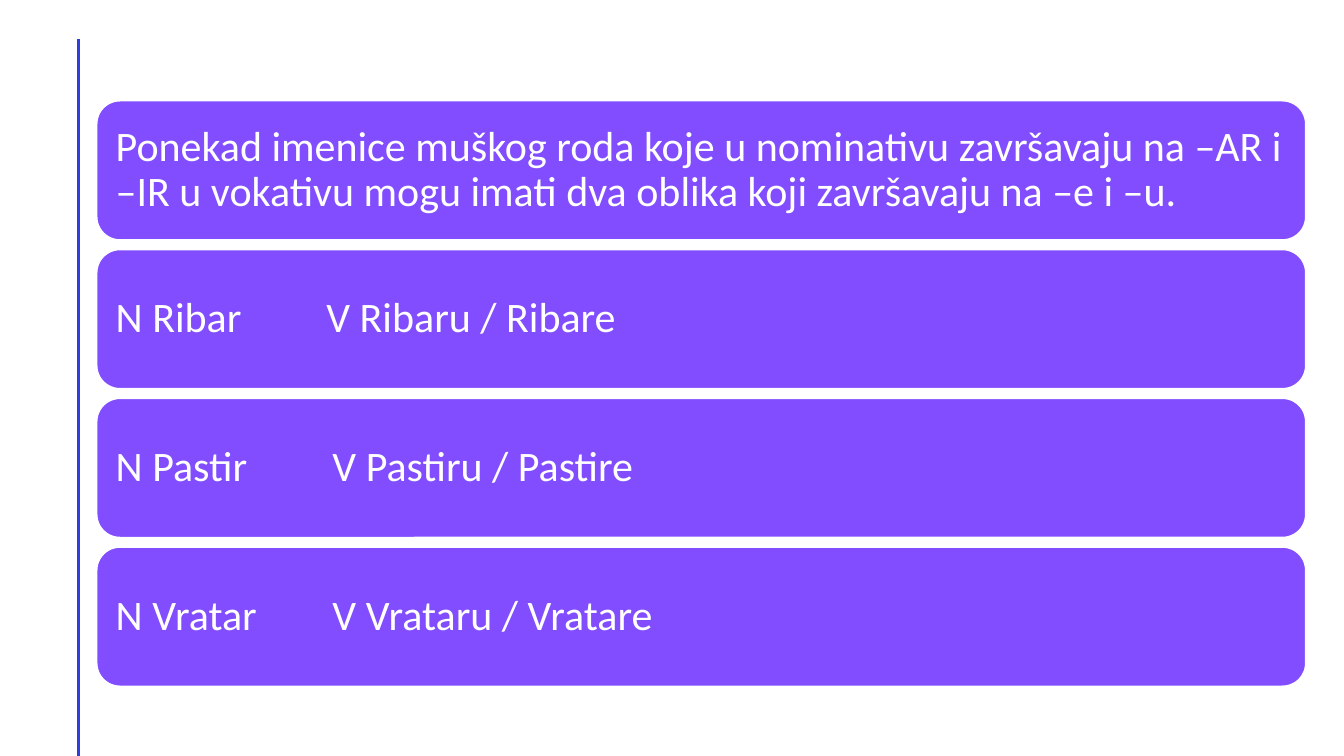
from lxml import etree
from pptx import Presentation
from pptx.dml.color import RGBColor
from pptx.enum import shapes, text
from pptx.oxml import ns
from pptx import util as u

WIDTH, HEIGHT = 13.33, 7.5
CARD_LEFT, CARD_TOP = 0.96, 1
CARD_WIDTH, CARD_HEIGHT = 11.99, 1.38
ROW_PITCH = 1.476

RULE = "Ponekad imenice muškog roda koje u nominativu završavaju na –AR i –IR u vokativu mogu imati dva oblika koji završavaju na –e i –u."
# Wording of each card and the tab stop, in inches, of its vocative
CARDS = [
    (RULE, None),
    ("N Ribar\tV Ribaru / Ribare", 2.09),
    ("N Pastir\tV Pastiru / Pastire", 2.15),
    ("N Vratar\tV Vrataru / Vratare", 2.15),
]


def color(value):
    return RGBColor.from_string(value)


def write(frame, wording, *, size, font, ink, tab=None, spacing=0.9):
    paragraph = frame.paragraphs[0]
    paragraph.alignment = text.PP_ALIGN.LEFT
    paragraph.line_spacing = spacing
    run = paragraph.add_run()
    run.text = wording
    run.font.size = u.Pt(size)
    run.font.name = font
    run.font.color.rgb = color(ink)
    if tab:
        stops = etree.SubElement(paragraph._p.get_or_add_pPr(), ns.qn("a:tabLst"))
        etree.SubElement(stops, ns.qn("a:tab"), pos=str(u.Inches(tab)), algn="l")


class GrammarSlide:
    font, size, inset = "Calibri", 30, u.Inches(0.12)
    violet, white, blue = "814DFF", "FFFFFF", "2F3CE0"

    def __init__(self, deck):
        self.slide = deck.slides.add_slide(deck.slide_layouts[6])

    def margin_line(self, x, top, bottom):
        line = self.slide.shapes.add_connector(
            shapes.MSO_CONNECTOR.STRAIGHT,
            u.Inches(x), u.Inches(top), u.Inches(x), u.Inches(bottom))
        line.line.color.rgb = color(self.blue)
        line.line.width = u.Pt(2)
        etree.SubElement(line._element.spPr, ns.qn("a:effectLst"))

    def card(self, row, wording, tab):
        card = self.slide.shapes.add_shape(
            shapes.MSO_SHAPE.ROUNDED_RECTANGLE,
            u.Inches(CARD_LEFT), u.Inches(CARD_TOP + row * ROW_PITCH),
            u.Inches(CARD_WIDTH), u.Inches(CARD_HEIGHT))
        card.shadow.inherit = False
        card.fill.solid()
        card.fill.fore_color.rgb = color(self.violet)
        card.line.color.rgb = color(self.white)
        card.line.width = u.Pt(1)
        frame = card.text_frame
        frame.word_wrap = True
        frame.vertical_anchor = text.MSO_ANCHOR.MIDDLE
        frame.margin_left = frame.margin_right = self.inset
        frame.margin_top = frame.margin_bottom = self.inset
        write(frame, wording, size=self.size, font=self.font, ink=self.white, tab=tab)


def main():
    deck = Presentation()
    deck.slide_width, deck.slide_height = u.Inches(WIDTH), u.Inches(HEIGHT)
    vocative = GrammarSlide(deck)
    vocative.margin_line(0.78, 0.39, HEIGHT)
    for row, (wording, tab) in enumerate(CARDS):
        vocative.card(row, wording, tab)
    deck.save("out.pptx")


if __name__ == "__main__":
    main()
